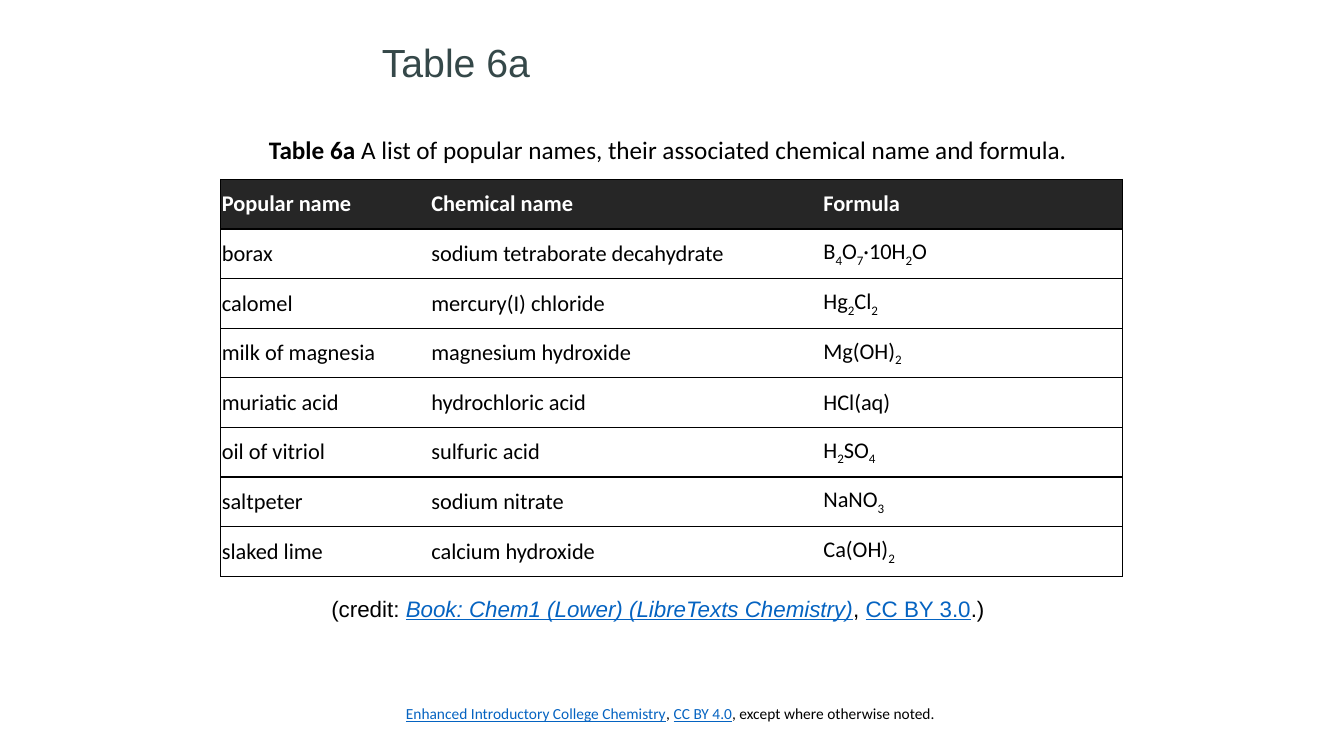
from pptx import Presentation
from pptx.dml.color import RGBColor as RGB
from pptx.enum.text import MSO_ANCHOR as Anchor, PP_ALIGN as Align
from pptx.oxml import parse_xml
from pptx.oxml.ns import nsdecls
from pptx.util import Cm, Pt

# Content: runs are (text, style), styles b bold, i italic, u link look
TITLE = "Table 6a"
CAPTION = [
    ("Table 6a\u00a0", "b"),
    ("A list of popular names, their associated chemical name and formula.", ""),
]
CREDIT = [
    ("(credit: ", ""),
    ("Book: Chem1 (Lower) (LibreTexts Chemistry)", "iu"),
    (", ", ""),
    ("CC BY 3.0", "u"),
    (".)", ""),
]
FOOTER = [
    ("Enhanced Introductory College Chemistry", "u"),
    (", ", ""),
    ("CC BY 4.0", "u"),
    (", except where otherwise noted.", ""),
]
# Underscores enclose subscripts
ROWS = [
    ("Popular name", "Chemical name", "Formula"),
    ("borax", "sodium tetraborate decahydrate", "B_4_O_7_·10H_2_O"),
    ("calomel", "mercury(I) chloride", "Hg_2_Cl_2_"),
    ("milk of magnesia", "magnesium hydroxide", "Mg(OH)_2_"),
    ("muriatic acid", "hydrochloric acid", "HCl(aq)"),
    ("oil of vitriol", "sulfuric acid", "H_2_SO_4_"),
    ("saltpeter", "sodium nitrate", "NaNO_3_"),
    ("slaked lime", "calcium hydroxide", "Ca(OH)_2_"),
]
WIDTHS = (5.28, 9.88, 7.57)
HIGH = 1.25
COLORS = {"ink": "000000", "paper": "FFFFFF", "head": "262626",
          "title": "354849", "link": "0563C1"}


def add_run(para, text, size, face, color, style=""):
    run = para.add_run()
    run.text = text
    font = run.font
    font.size, font.name = Pt(size), face
    font.bold, font.italic = "b" in style, "i" in style
    font.underline = "u" in style
    font.color.rgb = RGB.from_string(COLORS["link" if "u" in style else color])
    return run


def add_box(place, runs, size, face):
    frame = slide.shapes.add_textbox(*map(Cm, place)).text_frame
    frame.word_wrap = True
    for text, style in runs:
        add_run(frame.paragraphs[0], text, size, face, "ink", style)


def set_edges(cell, col):
    shown = {"L": col == 0, "R": col == len(WIDTHS) - 1, "T": True, "B": True}
    props = cell._tc.get_or_add_tcPr()
    for side, on in shown.items():
        fill = (f'<a:solidFill><a:srgbClr val="{COLORS["ink"]}"/></a:solidFill>'
                if on else "<a:noFill/>")
        props.append(parse_xml(
            f'<a:ln{side} {nsdecls("a")} w="12700">{fill}</a:ln{side}>'))


deck = Presentation()
deck.slide_width, deck.slide_height = Cm(33.87), Cm(19.05)
slide = deck.slides.add_slide(deck.slide_layouts[5])

# Title
title = slide.shapes.title
title.left, title.top, title.width, title.height = map(Cm, (9.37, 0.51, 10.92, 1.78))
title.text_frame.vertical_anchor = Anchor.BOTTOM
para = title.text_frame.paragraphs[0]
para.alignment, para.line_spacing = Align.LEFT, 0.9
add_run(para, TITLE, 28, "Arial", "title")

# Caption, credit and footer
add_box((6.53, 3.25, 20.8, 1.02), CAPTION, 18, "Calibri")
add_box((8.1, 14.86, 17.65, 0.94), CREDIT, 16, "Arial")
add_box((9.98, 17.63, 17.96, 1.02), FOOTER, 11, "Calibri")

# Table of names
table = slide.shapes.add_table(
    len(ROWS), len(WIDTHS), Cm(5.56), Cm(4.52),
    Cm(sum(WIDTHS)), Cm(HIGH * len(ROWS))).table
for col, width in zip(table.columns, WIDTHS):
    col.width = Cm(width)
for r, row in enumerate(ROWS):
    back, ink, style = ("paper", "ink", "") if r else ("head", "paper", "b")
    for c, text in enumerate(row):
        cell = table.cell(r, c)
        cell.vertical_anchor = Anchor.MIDDLE
        cell.margin_left = cell.margin_right = Cm(0.03)
        cell.margin_top = cell.margin_bottom = Cm(0.03)
        set_edges(cell, c)
        cell.fill.solid()
        cell.fill.fore_color.rgb = RGB.from_string(COLORS[back])
        for n, part in enumerate(text.split("_")):
            if part:
                run = add_run(cell.text_frame.paragraphs[0], part, 16,
                              "Calibri", ink, style)
                if n % 2:
                    run.font._element.set("baseline", "-25000")

deck.save("out.pptx")
